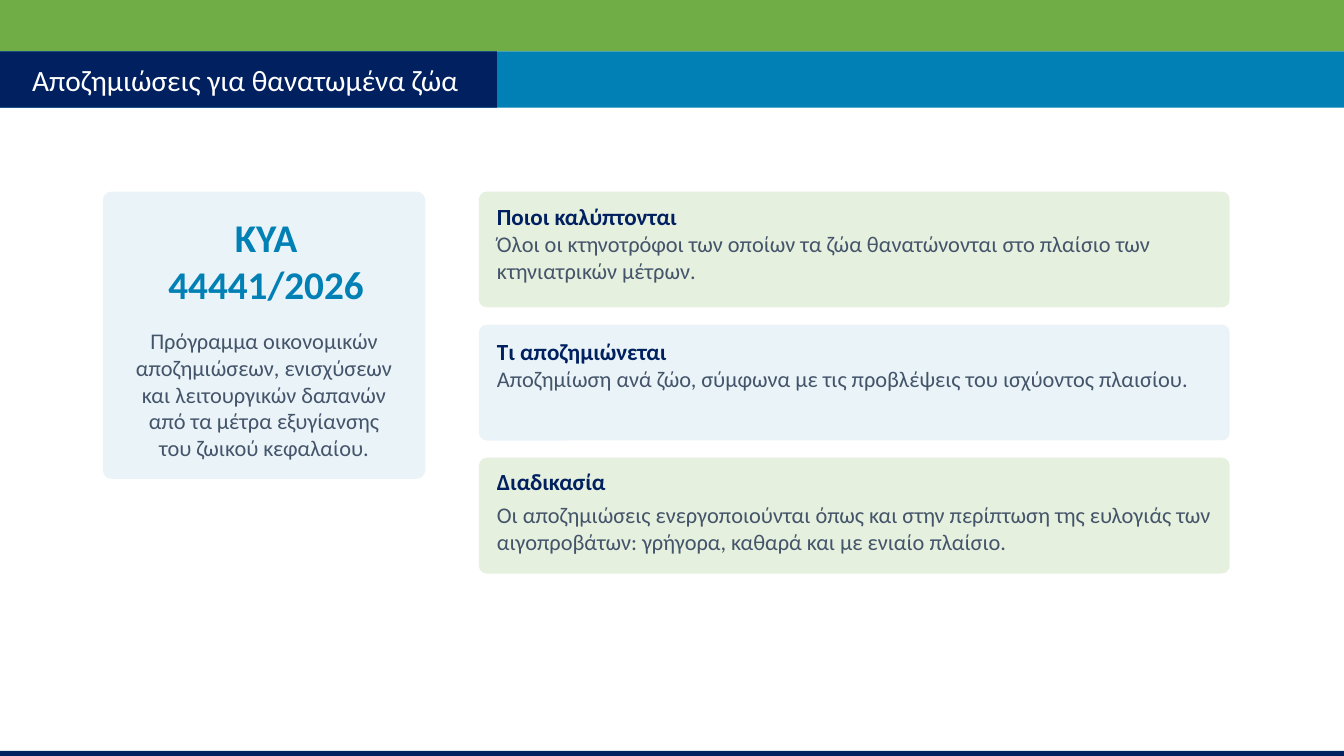
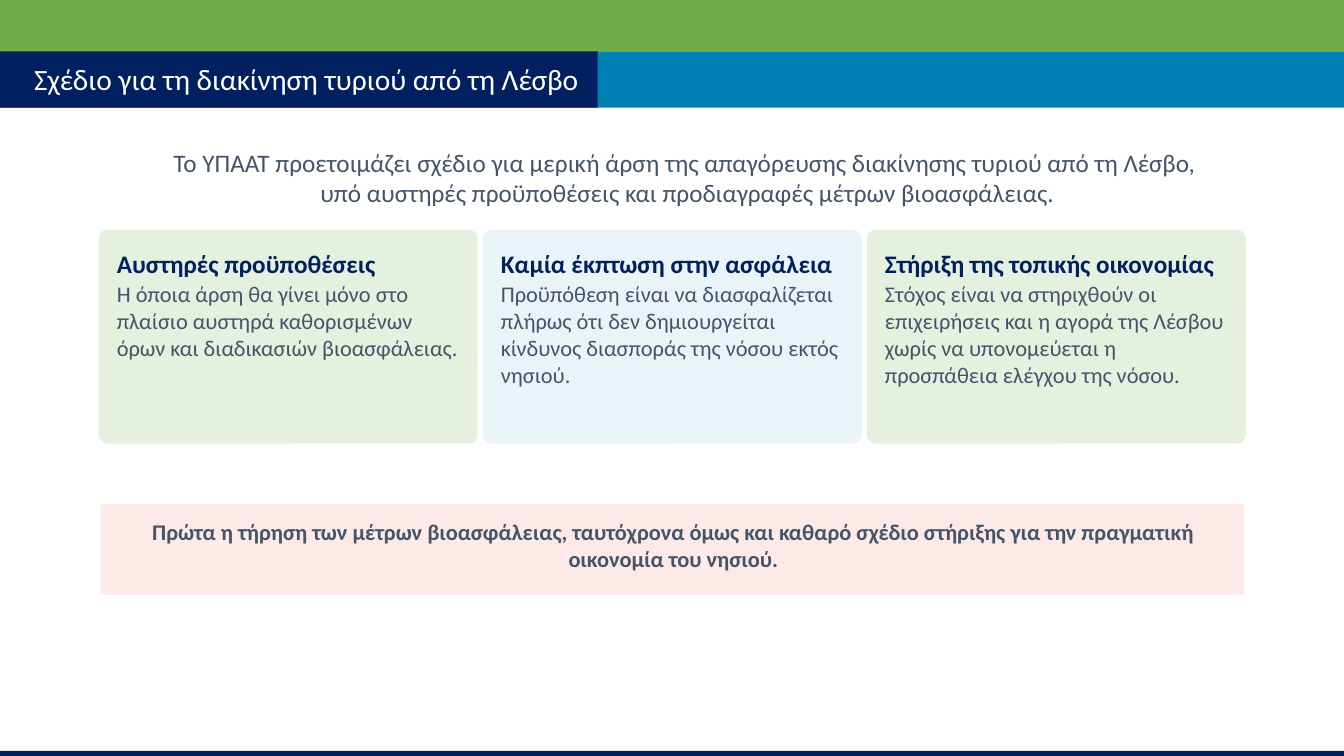
"""Build two slides on livestock compensation and the Lesvos cheese plan."""
from pptx import Presentation
from pptx.dml.color import RGBColor
from pptx.enum.shapes import MSO_SHAPE as Shape
from pptx.enum.text import MSO_ANCHOR as Anchor, PP_ALIGN as Align
from pptx.util import Pt

GREEN = RGBColor(0x70, 0xAD, 0x47)
BLUE = RGBColor(0x00, 0x80, 0xB4)
NAVY = RGBColor(0x00, 0x20, 0x60)
SLATE = RGBColor(0x44, 0x54, 0x6A)
WHITE = RGBColor(0xFF, 0xFF, 0xFF)
PALE_GREEN = RGBColor(0xE6, 0xF0, 0xDE)
PALE_BLUE = RGBColor(0xEA, 0xF4, 0xF8)
PALE_RED = RGBColor(0xFD, 0xE9, 0xE7)

WIDTH, HEIGHT = 960, 540
BAND_TOP, BAND_HEIGHT = 36.72, 40.32
FOOTER_HEIGHT = 3.6
CARD_PADDING = 12.96
CARD_FILLS = [PALE_GREEN, PALE_BLUE, PALE_GREEN]

TITLE = {"size": Pt(21), "color": WHITE}
BODY = {"size": Pt(16), "color": SLATE}
INTRO = {"size": Pt(18), "color": SLATE}
ROW_HEADING = {"size": Pt(16.5), "color": NAVY, "bold": True}
COLUMN_HEADING = {"size": Pt(18), "color": NAVY, "bold": True}
DECISION = {"size": Pt(28), "color": BLUE, "bold": True}
CLOSING = {"size": Pt(16), "color": SLATE, "bold": True}


def add_panel(slide, left, top, width, height, fill, radius=None):
    kind = Shape.RECTANGLE if radius is None else Shape.ROUNDED_RECTANGLE
    shape = slide.shapes.add_shape(kind, Pt(left), Pt(top), Pt(width), Pt(height))
    if radius is not None:
        shape.adjustments[0] = radius
    shape.shadow.inherit = False
    shape.fill.solid()
    shape.fill.fore_color.rgb = fill
    shape.line.fill.background()


def add_text(slide, left, top, width, height, text, style, align=Align.LEFT, anchor=Anchor.MIDDLE):
    box = slide.shapes.add_textbox(Pt(left), Pt(top), Pt(width), Pt(height))
    frame = box.text_frame
    frame.word_wrap = True
    frame.vertical_anchor = anchor
    for side in ("left", "top", "right", "bottom"):
        setattr(frame, f"margin_{side}", 0)
    frame.text = text
    for paragraph in frame.paragraphs:
        paragraph.alignment = align
        for run in paragraph.runs:
            run.font.name = "Calibri"
            for name, value in style.items():
                if name == "color":
                    run.font.color.rgb = value
                else:
                    setattr(run.font, name, value)


presentation = Presentation()
presentation.slide_width, presentation.slide_height = Pt(WIDTH), Pt(HEIGHT)

titles = [
    ("Αποζημιώσεις για θανατωμένα ζώα", 354.96, 23.04, 44.64),
    ("Σχέδιο για τη διακίνηση τυριού από τη Λέσβο", 426.96, 24.48, 43.92),
]
slides = []
for title, tab_width, title_left, title_top in titles:
    slide = presentation.slides.add_slide(presentation.slide_layouts[6])
    add_panel(slide, 0, 0, WIDTH, BAND_TOP, GREEN)
    add_panel(slide, 0, BAND_TOP, WIDTH, BAND_HEIGHT, BLUE)
    add_panel(slide, 0, BAND_TOP, tab_width, BAND_HEIGHT, NAVY)
    add_text(slide, title_left, title_top, 849.6, 24.48, title, TITLE)
    add_panel(slide, 0, HEIGHT - FOOTER_HEIGHT, WIDTH, FOOTER_HEIGHT, NAVY)
    slides.append(slide)
compensation, cheese = slides

add_panel(compensation, 73.44, 136.8, 230.4, 205.2, PALE_BLUE, 0.03)
add_text(compensation, 96.48, 152.64, 187.2, 66.24, "ΚΥΑ\n44441/2026", DECISION, Align.CENTER)
add_text(
    compensation, 93.6, 249.12, 190.08, 64.8,
    "Πρόγραμμα οικονομικών αποζημιώσεων, ενισχύσεων και λειτουργικών δαπανών "
    "από τα μέτρα εξυγίανσης του ζωικού κεφαλαίου.",
    BODY, Align.CENTER,
)

ROW_LEFT, ROW_TOP, ROW_WIDTH, ROW_HEIGHT, ROW_STEP = 342, 136.8, 536.4, 82.8, 95.04
rows = [
    ("Ποιοι καλύπτονται", 4.32, 27.36,
     "Όλοι οι κτηνοτρόφοι των οποίων τα ζώα θανατώνονται στο πλαίσιο των κτηνιατρικών μέτρων."),
    ("Τι αποζημιώνεται", 5.04, 28.8,
     "Αποζημίωση ανά ζώο, σύμφωνα με τις προβλέψεις του ισχύοντος πλαισίου."),
    ("Διαδικασία", 2.88, 30.96,
     "Οι αποζημιώσεις ενεργοποιούνται όπως και στην περίπτωση της ευλογιάς των "
     "αιγοπροβάτων: γρήγορα, καθαρά και με ενιαίο πλαίσιο."),
]
for index, (heading, heading_offset, body_offset, body) in enumerate(rows):
    top = ROW_TOP + index * ROW_STEP
    left, width = ROW_LEFT + CARD_PADDING, ROW_WIDTH - 2 * CARD_PADDING
    add_panel(compensation, ROW_LEFT, top, ROW_WIDTH, ROW_HEIGHT, CARD_FILLS[index], 0.07)
    add_text(compensation, left, top + heading_offset, width, 27.36, heading, ROW_HEADING)
    add_text(compensation, left, top + body_offset, width, 38.16, body, BODY, anchor=Anchor.TOP)

add_text(
    cheese, 66.24, 104.4, 849.6, 44.64,
    "Το ΥΠΑΑΤ προετοιμάζει σχέδιο για μερική άρση της απαγόρευσης διακίνησης τυριού από τη Λέσβο, \v"
    "υπό αυστηρές προϋποθέσεις και προδιαγραφές μέτρων βιοασφάλειας.",
    INTRO, Align.CENTER,
)

COLUMN_LEFT, COLUMN_TOP, COLUMN_WIDTH, COLUMN_HEIGHT, COLUMN_STEP = 70.56, 164.16, 270.72, 152.64, 274.32
columns = [
    ("Αυστηρές προϋποθέσεις",
     "Η όποια άρση θα γίνει μόνο στο πλαίσιο αυστηρά καθορισμένων όρων και διαδικασιών βιοασφάλειας."),
    ("Καμία έκπτωση στην ασφάλεια",
     "Προϋπόθεση είναι να διασφαλίζεται πλήρως ότι δεν δημιουργείται κίνδυνος "
     "διασποράς της νόσου εκτός νησιού."),
    ("Στήριξη της τοπικής οικονομίας",
     "Στόχος είναι να στηριχθούν οι επιχειρήσεις και η αγορά της Λέσβου "
     "χωρίς να υπονομεύεται η προσπάθεια ελέγχου της νόσου."),
]
for index, (heading, body) in enumerate(columns):
    card_left = COLUMN_LEFT + index * COLUMN_STEP
    left, width = card_left + CARD_PADDING, COLUMN_WIDTH - 2 * CARD_PADDING
    add_panel(cheese, card_left, COLUMN_TOP, COLUMN_WIDTH, COLUMN_HEIGHT, CARD_FILLS[index], 0.04)
    add_text(cheese, left, COLUMN_TOP + 10.08, width, 27.36, heading, COLUMN_HEADING)
    add_text(cheese, left, COLUMN_TOP + 36, width, 108, body, BODY, anchor=Anchor.TOP)

add_panel(cheese, 72, 360, 816.48, 64.8, PALE_RED)
add_text(
    cheese, 87.84, 380.16, 786.24, 18,
    "Πρώτα η τήρηση των μέτρων βιοασφάλειας, ταυτόχρονα όμως και καθαρό σχέδιο στήριξης "
    "για την πραγματική οικονομία του νησιού.",
    CLOSING, Align.CENTER,
)

presentation.save("out.pptx")
